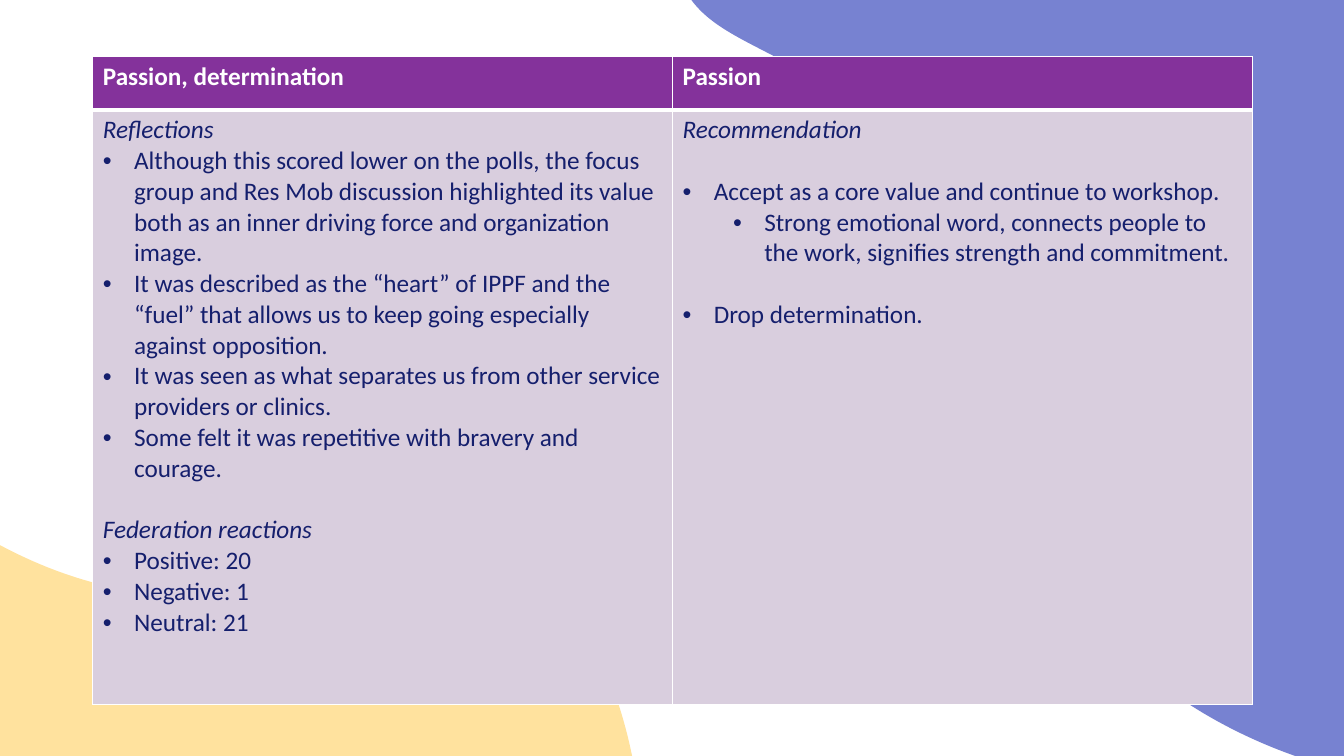
from math import cos, radians, sin

from lxml.etree import SubElement
from pptx import Presentation
from pptx.dml.color import RGBColor
from pptx.enum.text import PP_ALIGN
from pptx.oxml import parse_xml
from pptx.oxml.ns import nsdecls, qn
from pptx.util import Inches, Pt

WHITE = RGBColor(0xFF, 0xFF, 0xFF)
NAVY = RGBColor(0x15, 0x1F, 0x6D)
PURPLE = RGBColor(0x84, 0x32, 0x9B)
LILAC = RGBColor(0xD9, 0xCE, 0xDE)
YELLOW = RGBColor(0xFF, 0xE2, 0x9E)
BLUE = RGBColor(0x77, 0x82, 0xD1)

FONT = "Calibri"
TEXT_SIZE = Pt(18)
LINE_GAP = Pt(22)
HANGING = 0.31

# Blobs in inches: box, then the outline as cubic curves (two controls and an end);
# the last curve ends where the first one starts
YELLOW_BOX = (-8.36, 3.82, 14.73, 8.22)
YELLOW_CURVES = [
    (6.61, 6.41, 6.95, 10.23, 5.15, 11.55),
    (3.73, 12.58, 1.5, 11.71, 1.08, 11.55),
    (-0.37, 10.99, -0.29, 10.36, -1.36, 10.11),
    (-3.38, 9.65, -4.46, 11.68, -6.16, 11.22),
    (-7.42, 10.87, -8.34, 9.35, -8.36, 8.05),
    (-8.38, 5.75, -5.6, 3.77, -3.39, 3.82),
    (-1.19, 3.88, -0.59, 5.91, 2.07, 5.93),
    (3.77, 5.94, 4.33, 5.12, 5.15, 5.58),
]
BLUE_BOX = (5.44, -1.62, 13.56, 7.57)
BLUE_CURVES = [
    (6.3, -1.82, 8.58, -4.51, 10.61, -4.19),
    (12.2, -3.93, 13.08, -1.9, 13.24, -1.52),
    (13.81, -0.21, 13.35, 0.14, 13.88, 1.01),
    (14.89, 2.63, 16.91, 2.01, 17.71, 3.43),
    (18.3, 4.47, 17.9, 6.06, 17.06, 6.91),
    (15.57, 8.42, 12.48, 7.88, 11.08, 6.4),
    (9.69, 4.93, 10.63, 3.22, 8.92, 1.46),
    (7.83, 0.34, 6.93, 0.51, 6.7, -0.33),
]

# Cell text: (kind, text, starts after a gap)
HEADINGS = ["Passion, determination", "Passion"]
REFLECTIONS = [
    ("label", "Reflections", False),
    ("bullet", "Although this scored lower on the polls, the focus group and Res Mob "
     "discussion highlighted its value both as an inner driving force and "
     "organization image.", False),
    ("bullet", "It was described as the “heart” of IPPF and the “fuel” that allows us "
     "to keep going especially against opposition.", False),
    ("bullet", "It was seen as what separates us from other service providers or "
     "clinics.", False),
    ("bullet", "Some felt it was repetitive with bravery and courage.", False),
    ("label", "Federation reactions", True),
    ("count", "Positive: 20", False),
    ("count", "Negative: 1", False),
    ("count", "Neutral: 21", False),
]
RECOMMENDATION = [
    ("label", "Recommendation", False),
    ("bullet", "Accept as a core value and continue to workshop.", True),
    ("detail", "Strong emotional word, connects people to the work, signifies strength "
     "and commitment.", False),
    ("bullet", "Drop determination.", True),
]


def add_blob(slide, box, curves, color, rotation=0):
    """Draw a blob in its box; the curves are given as they look after rotation."""
    left, top, width, height = box
    center_x, center_y = left + width / 2, top + height / 2
    cosine, sine = cos(radians(rotation)), sin(radians(rotation))

    def local_point(x, y):
        dx, dy = x - center_x, y - center_y
        return (Inches(width / 2 + dx * cosine + dy * sine),
                Inches(height / 2 - dx * sine + dy * cosine))

    # Straight outline through the curve ends
    ends = [local_point(*curve[4:]) for curve in curves]
    builder = slide.shapes.build_freeform(*ends[-1])
    builder.add_line_segments(ends[:-1], close=True)
    shape = builder.convert_to_shape()
    shape.left, shape.top, shape.width, shape.height = map(Inches, box)
    shape.rotation = rotation

    # Bend each side into its curve
    outline = shape._element.find(".//" + qn("a:path"))
    outline.set("w", str(Inches(width)))
    outline.set("h", str(Inches(height)))
    start, close = outline[0], outline[-1]
    start[0].set("x", str(ends[-1][0]))
    start[0].set("y", str(ends[-1][1]))
    for side in outline.findall(qn("a:lnTo")):
        outline.remove(side)
    for curve in curves:
        bend = SubElement(outline, qn("a:cubicBezTo"))
        for index in (0, 2, 4):
            x, y = local_point(*curve[index:index + 2])
            SubElement(bend, qn("a:pt"), x=str(x), y=str(y))
    outline.append(close)

    shape.shadow.inherit = False
    shape.fill.solid()
    shape.fill.fore_color.rgb = color
    shape.line.fill.background()


def style_cell(cell, color, bottom_width):
    """Fill a cell and give it white borders."""
    cell.fill.solid()
    cell.fill.fore_color.rgb = color
    properties = cell._tc.get_or_add_tcPr()
    for index, side in enumerate("LRTB"):
        width = Pt(bottom_width if side == "B" else 1)
        properties.insert(index, parse_xml(
            f'<a:ln{side} {nsdecls("a")} w="{width}"><a:solidFill>'
            f'<a:srgbClr val="{WHITE}"/></a:solidFill></a:ln{side}>'))


def add_bullet(paragraph, left):
    properties = paragraph._p.get_or_add_pPr()
    properties.set("marL", str(Inches(left)))
    properties.set("indent", str(Inches(-HANGING)))
    SubElement(properties, qn("a:buFont")).set("typeface", "Arial")
    SubElement(properties, qn("a:buChar")).set("char", "•")


def format_font(font, color):
    font.name = FONT
    font.size = TEXT_SIZE
    font.color.rgb = color


def fill_body(cell, items):
    """Write labels and bullets into a body cell."""
    text_frame = cell.text_frame
    text_frame.text = "\n".join(text for _, text, _ in items)
    for paragraph, (kind, _, gap) in zip(text_frame.paragraphs, items):
        if kind == "detail":
            paragraph.level = 1
        if kind != "label":
            add_bullet(paragraph, HANGING + 0.5 * paragraph.level)
        if kind == "count":
            paragraph.alignment = PP_ALIGN.JUSTIFY
        if gap:
            paragraph.space_before = LINE_GAP
        for run in paragraph.runs:
            format_font(run.font, NAVY)
            run.font.bold = False
            run.font.italic = kind == "label"


def add_value_table(slide, left, top, width, height):
    """Two columns: a heading row above a tall text row."""
    table = slide.shapes.add_table(2, 2, left, top, width, height).table
    table.rows[0].height = Inches(0.53)
    table.rows[1].height = height - table.rows[0].height
    for column, (heading, items) in enumerate(zip(HEADINGS, [REFLECTIONS, RECOMMENDATION])):
        table.columns[column].width = width // 2
        head, body = table.cell(0, column), table.cell(1, column)
        style_cell(head, PURPLE, 3)
        style_cell(body, LILAC, 1)
        head.text_frame.text = heading
        font = head.text_frame.paragraphs[0].runs[0].font
        format_font(font, WHITE)
        font.bold = True
        fill_body(body, items)


def main():
    presentation = Presentation()
    presentation.slide_width = Inches(13.33)
    presentation.slide_height = Inches(7.5)
    slide = presentation.slides.add_slide(presentation.slide_layouts[6])
    # Background blobs
    add_blob(slide, YELLOW_BOX, YELLOW_CURVES, YELLOW)
    add_blob(slide, BLUE_BOX, BLUE_CURVES, BLUE, rotation=225.3)
    # Value table
    add_value_table(slide, Inches(0.92), Inches(0.56), Inches(11.5), Inches(6.43))
    presentation.save("out.pptx")


if __name__ == "__main__":
    main()
